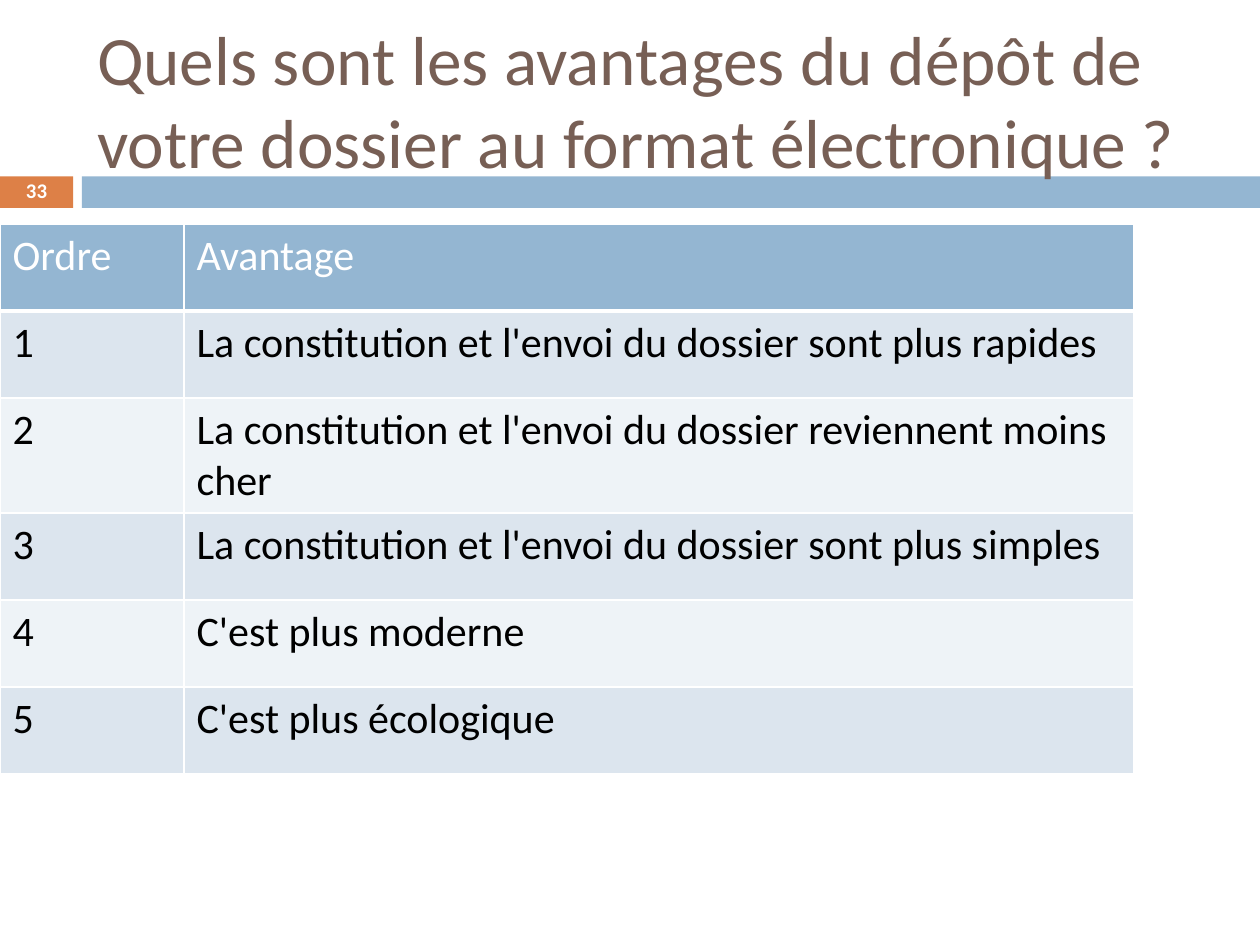
from lxml import etree
from pptx import Presentation
from pptx.dml.color import RGBColor
from pptx.enum.shapes import MSO_SHAPE
from pptx.enum.text import MSO_ANCHOR, PP_ALIGN
from pptx.oxml.ns import qn
from pptx.util import Inches, Pt

RECTANGLE = MSO_SHAPE.RECTANGLE
MIDDLE = MSO_ANCHOR.MIDDLE
LEFT, CENTER = PP_ALIGN.LEFT, PP_ALIGN.CENTER

# Content
TITLE = "Quels sont les avantages du dépôt de votre dossier au format électronique ?"
PAGE_NUMBER = "33"
HEADER = ("Ordre", "Avantage")
ADVANTAGES = [
    "La constitution et l'envoi du dossier sont plus rapides",
    "La constitution et l'envoi du dossier reviennent moins cher",
    "La constitution et l'envoi du dossier sont plus simples",
    "C'est plus moderne",
    "C'est plus écologique",
]

# Look
FONT = "Calibri"
ORANGE, BLUE, BROWN = "DD8047", "94B6D2", "775F55"
WHITE, BLACK = "FFFFFF", "000000"
BANDS = ("DCE5EE", "EEF3F7")
COLUMN_WIDTHS = (1.46, 7.54)
ROW_HEIGHT = 0.69


def color(code):
    return RGBColor.from_string(code)


def style(para, size, code, bold=False, align=LEFT):
    para.alignment = align
    font = para.font
    font.name, font.size, font.bold = FONT, Pt(size), bold
    font.color.rgb = color(code)


def add_bar(page, left, width, code):
    bar = page.shapes.add_shape(
        RECTANGLE, Inches(left), Inches(1.4), Inches(width), Inches(0.25))
    bar.shadow.inherit = False
    bar.fill.solid()
    bar.fill.fore_color.rgb = color(code)
    bar.line.fill.background()


def set_borders(cell, code, bottom):
    properties = cell._tc.get_or_add_tcPr()
    widths = {"a:lnL": 1, "a:lnR": 1, "a:lnT": 1, "a:lnB": bottom}
    for position, (tag, width) in enumerate(widths.items()):
        line = etree.Element(qn(tag), w=str(Pt(width)))
        fill = etree.SubElement(line, qn("a:solidFill"))
        etree.SubElement(fill, qn("a:srgbClr"), val=code)
        properties.insert(position, line)


deck = Presentation()
deck.slide_width, deck.slide_height = Inches(10), Inches(7.5)
page = deck.slides.add_slide(deck.slide_layouts[5])

# Band with the page number
add_bar(page, 0, 0.58, ORANGE)
add_bar(page, 0.65, 9.35, BLUE)
box = page.shapes.add_textbox(Inches(0), Inches(1.39), Inches(0.58), Inches(0.27))
frame = box.text_frame
frame.word_wrap = True
frame.vertical_anchor = MIDDLE
frame.margin_top = frame.margin_bottom = 0
frame.text = PAGE_NUMBER
frame.paragraphs[0].line_spacing = 0.8
style(frame.paragraphs[0], 11.9, WHITE, bold=True, align=CENTER)

# Title, in front of the band
title = page.shapes.title
title.left, title.top = Inches(0.67), Inches(0.25)
title.width, title.height = Inches(8.92), Inches(1.08)
title.text_frame.text = TITLE
title.text_frame.vertical_anchor = MIDDLE
style(title.text_frame.paragraphs[0], 39.6, BROWN)
page.shapes._spTree.append(title._element)

# Table of numbered advantages
rows = [HEADER] + [(str(n), text) for n, text in enumerate(ADVANTAGES, 1)]
table = page.shapes.add_table(
    len(rows), len(HEADER), Inches(0), Inches(1.78),
    Inches(sum(COLUMN_WIDTHS)), Inches(ROW_HEIGHT * len(rows))).table
for column, width in zip(table.columns, COLUMN_WIDTHS):
    column.width = Inches(width)
for r, texts in enumerate(rows):
    is_header = r == 0
    table.rows[r].height = Inches(ROW_HEIGHT)
    for c, text in enumerate(texts):
        cell = table.cell(r, c)
        cell.text = text
        style(cell.text_frame.paragraphs[0], 24, WHITE if is_header else BLACK)
        cell.fill.solid()
        cell.fill.fore_color.rgb = color(BLUE if is_header else BANDS[(r - 1) % 2])
        set_borders(cell, WHITE, bottom=3 if is_header else 1)

deck.save("out.pptx")
